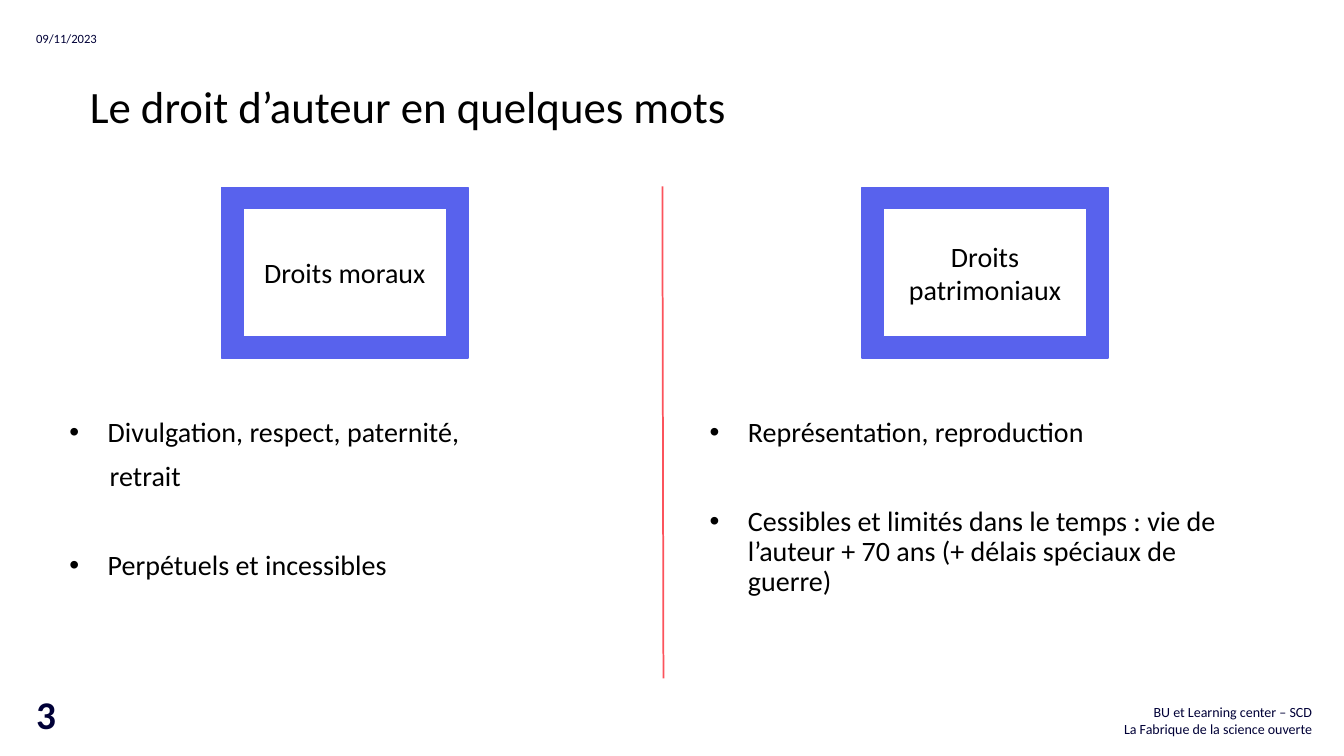
import pptx
import pptx.util
import pptx.dml.color
import pptx.enum.shapes
import pptx.enum.text
import pptx.oxml
import pptx.oxml.ns

Inches = pptx.util.Inches
Pt = pptx.util.Pt
RGBColor = pptx.dml.color.RGBColor
ALIGN = pptx.enum.text.PP_ALIGN
ANCHOR = pptx.enum.text.MSO_ANCHOR

BLACK = RGBColor(0x00, 0x00, 0x00)
NAVY = RGBColor(0x00, 0x00, 0x37)
BLUE = RGBColor(0x58, 0x62, 0xED)
RED = RGBColor(0xFC, 0x53, 0x5C)

LINE_SPACING = 0.9
SECTION_GAP = 42
COLUMNS = [
    (0.59, "Droits moraux", [
        ("Divulgation, respect, paternité,", True, 0),
        ("retrait", False, 10),
        ("Perpétuels et incessibles", True, SECTION_GAP),
    ]),
    (6.94, "Droits patrimoniaux", [
        ("Représentation, reproduction", True, 0),
        ("Cessibles et limités dans le temps : vie de l’auteur + 70 ans "
         "(+ délais spéciaux de guerre)", True, SECTION_GAP),
    ]),
]


def style_paragraph(p, size, color, align=ALIGN.LEFT, bold=False):
    p.alignment = align
    for r in p.runs:
        r.font.name = "Calibri"
        r.font.size = Pt(size)
        r.font.color.rgb = color
        r.font.bold = bold


def add_label(s, text, left, top, width, height, size, anchor,
              align=ALIGN.LEFT, bold=False):
    tf = s.shapes.add_textbox(Inches(left), Inches(top),
                              Inches(width), Inches(height)).text_frame
    tf.word_wrap = True
    tf.vertical_anchor = anchor
    tf.text = text
    for p in tf.paragraphs:
        style_paragraph(p, size, NAVY, align, bold)


def add_title(s, left, top, width, height):
    title = s.shapes.title
    title.left, title.top = Inches(left), Inches(top)
    title.width, title.height = Inches(width), Inches(height)
    tf = title.text_frame
    tf.text = "Le droit d’auteur en quelques mots"
    tf.vertical_anchor = ANCHOR.TOP
    p = tf.paragraphs[0]
    p.line_spacing = LINE_SPACING
    style_paragraph(p, 32, BLACK)


def add_frame(s, text, left, top, width, height):
    frame = s.shapes.add_shape(pptx.enum.shapes.MSO_SHAPE.FRAME, Inches(left),
                               Inches(top), Inches(width), Inches(height))
    frame.shadow.inherit = False
    frame.fill.solid()
    frame.fill.fore_color.rgb = BLUE
    frame.line.color.rgb = BLUE
    frame.line.width = Pt(1)
    tf = frame.text_frame
    tf.word_wrap = True
    tf.vertical_anchor = ANCHOR.MIDDLE
    tf.text = text
    style_paragraph(tf.paragraphs[0], 20, BLACK, ALIGN.CENTER)


def set_indent(p, bulleted):
    pPr = p._p.get_or_add_pPr()
    pPr.set("marL", str(Inches(0.38 if bulleted else 0.4)))
    pPr.set("indent", str(Inches(-0.38 if bulleted else 0)))
    if bulleted:
        font = pptx.oxml.ns.qn("a:buFont")
        pPr.append(pPr.makeelement(font, {"typeface": "Arial"}))
        char = pptx.oxml.ns.qn("a:buChar")
        pPr.append(pPr.makeelement(char, {"char": "•"}))


def add_points(s, points, left, top, width, height):
    tf = s.shapes.add_textbox(Inches(left), Inches(top),
                              Inches(width), Inches(height)).text_frame
    tf.word_wrap = True
    tf.text = "\n".join(text for text, _, _ in points)
    for p, (_, bulleted, gap) in zip(tf.paragraphs, points):
        set_indent(p, bulleted)
        p.line_spacing = LINE_SPACING
        p.space_before = Pt(gap)
        style_paragraph(p, 20, BLACK)


def add_column(s, heading, points, left, top, width):
    add_frame(s, heading, left + 1.61, top, 2.44, 1.69)
    add_points(s, points, left, top + 2.24, width, 2.4)


def add_divider(s, left, top, width, height):
    line = s.shapes.add_connector(
        pptx.enum.shapes.MSO_CONNECTOR.STRAIGHT, Inches(left), Inches(top),
        Inches(left + width), Inches(top + height))
    line.line.color.rgb = RED
    line.line.width = Pt(1.25)
    spPr = line._element.spPr
    spPr.append(spPr.makeelement(pptx.oxml.ns.qn("a:effectLst"), {}))


def add_page_marks(s, left, top, width, height):
    right, bottom = left + width, top + height
    add_label(s, "09/11/2023", left, top, 2.47, 0.25, 9, ANCHOR.MIDDLE)
    add_label(s, "3", left, bottom - 0.57, 2.47, 0.57, 28, ANCHOR.BOTTOM,
              bold=True)
    add_label(s, "BU et Learning center – SCD\nLa Fabrique de la science ouverte",
              right - 5.09, bottom - 0.44, 5.09, 0.44, 10, ANCHOR.BOTTOM,
              ALIGN.RIGHT)


def main():
    prs = pptx.Presentation()
    prs.slide_width, prs.slide_height = Inches(13.33), Inches(7.5)
    s = prs.slides.add_slide(prs.slide_layouts.get_by_name("Title Only"))
    add_page_marks(s, 0.26, 0.26, 12.85, 7.1)
    add_title(s, 0.79, 0.79, 10.46, 1.08)
    add_divider(s, 6.57, 1.85, 0.01, 4.88)
    for left, heading, points in COLUMNS:
        add_column(s, heading, points, left, 1.86, 5.66)
    prs.save("out.pptx")


if __name__ == "__main__":
    main()
